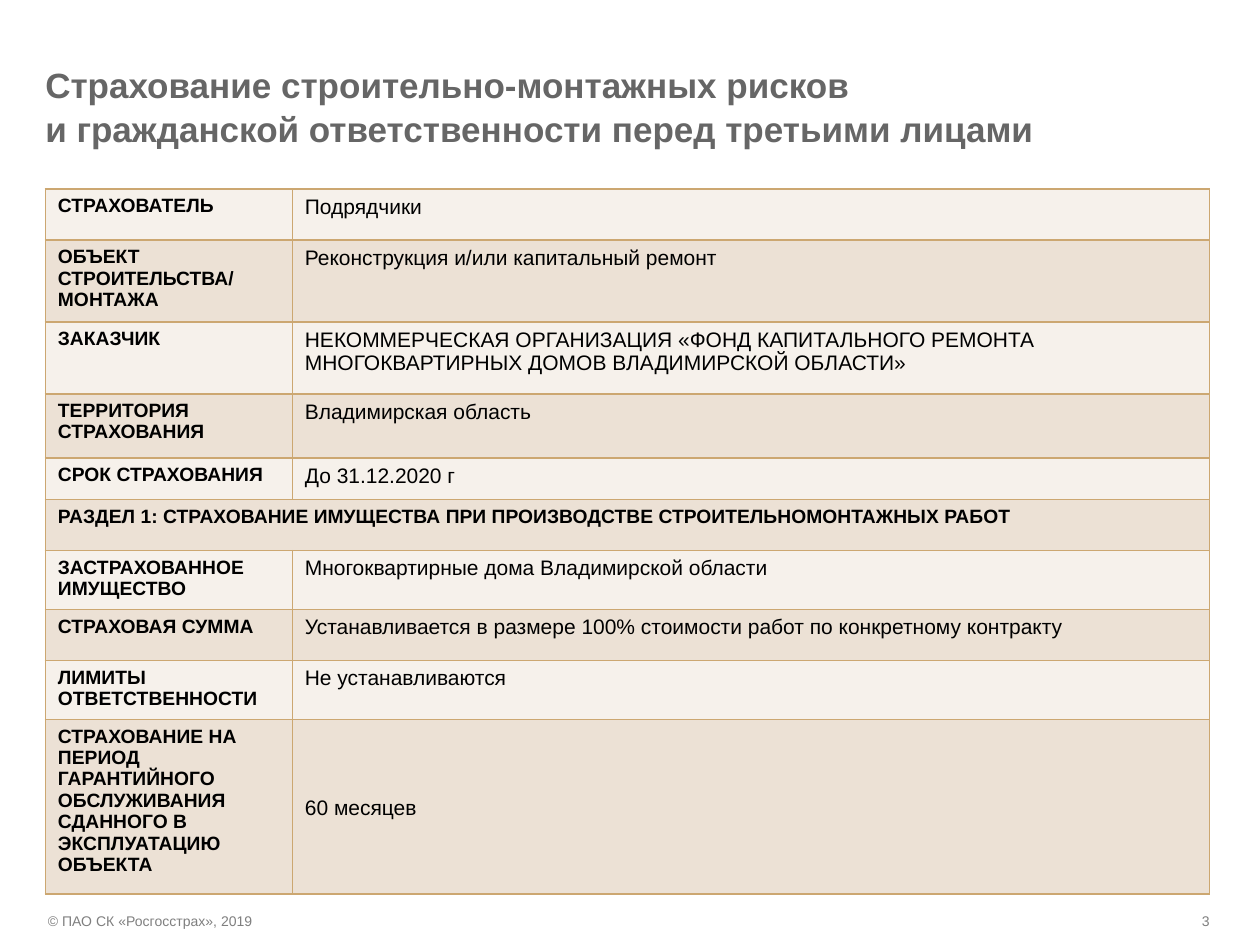
"""Builds the slide on insurance terms for construction and installation risks."""
from lxml.etree import SubElement
from pptx import Presentation
from pptx.dml.color import RGBColor
from pptx.enum.text import MSO_ANCHOR, PP_ALIGN
from pptx.oxml.ns import qn
from pptx.util import Inches, Pt

COLORS = {"title": "666666", "footer": "7F7F7F", "text": "000000",
          "border": "CCA771", "light": "F6F1EB", "dark": "ECE1D5"}

deck = Presentation()
deck.slide_width, deck.slide_height = Inches(10), Inches(7.5)
slide = deck.slides.add_slide(deck.slide_layouts[6])
column, row = deck.slide_width / 100, deck.slide_height / 100


def style_text(frame, color, size, bold=False):
    for paragraph in frame.paragraphs:
        for run in paragraph.runs:
            formats = {"name": "Arial", "size": Pt(size), "bold": bold}
            for key, value in formats.items():
                setattr(run.font, key, value)
            run.font.color.rgb = RGBColor.from_string(COLORS[color])


def add_label(text, box, color, size, bold=False, **formats):
    left, top, width, height = box
    frame = slide.shapes.add_textbox(int(left * column), int(top * row),
                                     int(width * column), int(height * row)).text_frame
    frame.text = text
    for key, value in formats.items():
        setattr(frame, key, value)
    style_text(frame, color, size, bold)
    return frame


add_label("© ПАО СК «Росгосстрах», 2019", (3.8, 95.9, 17.5, 3.2), "footer", 8,
          margin_left=0, word_wrap=False)
page_number = add_label("3", (93.6, 95.9, 3.4, 3.3), "footer", 8, word_wrap=True)
page_number.paragraphs[0].alignment = PP_ALIGN.RIGHT
title = add_label("Страхование строительно-монтажных рисков\v"
                  "и гражданской ответственности перед третьими лицами",
                  (3.6, 6.9, 85.4, 8.5), "title", 20, True, margin_left=0,
                  word_wrap=True, vertical_anchor=MSO_ANCHOR.MIDDLE)
title.paragraphs[0].line_spacing = 1.05

terms = [
    (5.4, "СТРАХОВАТЕЛЬ", "Подрядчики"),
    (8.6, "ОБЪЕКТ СТРОИТЕЛЬСТВА/\nМОНТАЖА", "Реконструкция и/или капитальный ремонт"),
    (7.6, "ЗАКАЗЧИК", "НЕКОММЕРЧЕСКАЯ ОРГАНИЗАЦИЯ «ФОНД КАПИТАЛЬНОГО РЕМОНТА "
                      "МНОГОКВАРТИРНЫХ ДОМОВ ВЛАДИМИРСКОЙ ОБЛАСТИ»"),
    (6.8, "ТЕРРИТОРИЯ СТРАХОВАНИЯ", "Владимирская область"),
    (4.4, "СРОК СТРАХОВАНИЯ", "До 31.12.2020 г"),
    (5.4, "РАЗДЕЛ 1: СТРАХОВАНИЕ ИМУЩЕСТВА ПРИ ПРОИЗВОДСТВЕ "
          "СТРОИТЕЛЬНОМОНТАЖНЫХ РАБОТ", None),
    (5.9, "ЗАСТРАХОВАННОЕ ИМУЩЕСТВО", "Многоквартирные дома Владимирской области"),
    (5.4, "СТРАХОВАЯ СУММА",
     "Устанавливается в размере 100% стоимости работ по конкретному контракту"),
    (5.9, "ЛИМИТЫ ОТВЕТСТВЕННОСТИ", "Не устанавливаются"),
    (17.2, "СТРАХОВАНИЕ НА ПЕРИОД ГАРАНТИЙНОГО ОБСЛУЖИВАНИЯ СДАННОГО "
           "В ЭКСПЛУАТАЦИЮ ОБЪЕКТА", "60 месяцев"),
]
term_widths = [19.6, 72.8]
conditions = slide.shapes.add_table(
    len(terms), 2, int(3.6 * column), int(20 * row), int(sum(term_widths) * column),
    int(sum(height for height, _, _ in terms) * row)).table
conditions.first_row = conditions.horz_banding = False
for table_column, width in zip(conditions.columns, term_widths):
    table_column.width = int(width * column)

for index, (height, term, condition) in enumerate(terms):
    conditions.rows[index].height = int(height * row)
    term_cell, condition_cell = conditions.cell(index, 0), conditions.cell(index, 1)
    if condition is None:
        term_cell.merge(condition_cell)
    for cell, text, size, bold in ((term_cell, term, 11, True),
                                   (condition_cell, condition, 12, False)):
        cell.text = text or ""
        style_text(cell.text_frame, "text", size, bold)
        properties = cell._tc.get_or_add_tcPr()
        for side in ("a:lnL", "a:lnR", "a:lnT", "a:lnB"):
            border = SubElement(properties, qn(side), w=str(Pt(1)))
            SubElement(SubElement(border, qn("a:solidFill")), qn("a:srgbClr"),
                       val=COLORS["border"])
        cell.fill.solid()
        cell.fill.fore_color.rgb = RGBColor.from_string(
            COLORS["dark" if index % 2 else "light"])
conditions.cell(len(terms) - 1, 1).margin_top = int(8.2 * row)

deck.save("out.pptx")
